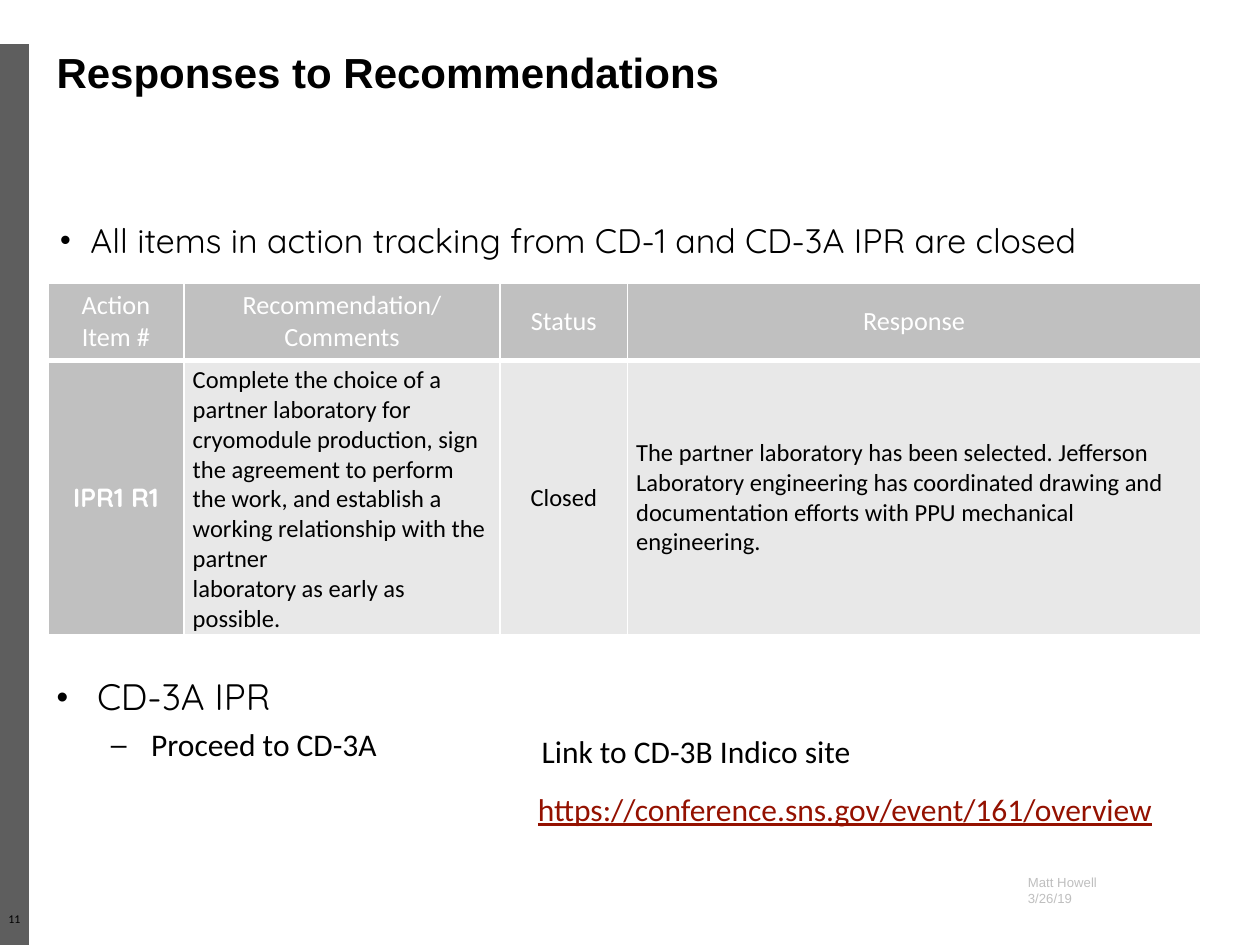
from copy import deepcopy
from dataclasses import dataclass, field

from lxml.etree import SubElement
from pptx import Presentation
from pptx.dml.color import RGBColor
from pptx.enum.shapes import MSO_SHAPE as Shape
from pptx.enum.text import MSO_ANCHOR as Anchor, PP_ALIGN as Align
from pptx.oxml import parse_xml
from pptx.oxml.ns import nsdecls, qn
from pptx.util import Inches, Pt

BLACK = RGBColor(0x00, 0x00, 0x00)
WHITE = RGBColor(0xFF, 0xFF, 0xFF)
SLATE = RGBColor(0x5E, 0x5E, 0x5E)
SILVER = RGBColor(0xBF, 0xBF, 0xBF)
HEAD = RGBColor(0xC0, 0xC0, 0xC0)
PALE = RGBColor(0xE8, 0xE8, 0xE8)
RED = RGBColor(0x94, 0x11, 0x00)

PAD = (0.1, 0.05)
SLIM = (0.07, 0.04)


@dataclass
class Para:
    text: str
    size: float
    face: str = "Calibri"
    color: RGBColor = BLACK
    font: dict = field(default_factory=dict)
    form: dict = field(default_factory=dict)
    mark: str = ""
    indent: tuple = (0, 0)


@dataclass
class Box:
    place: tuple
    paras: list
    pad: tuple = PAD
    anchor: Anchor = Anchor.TOP


def set_all(target, values: dict) -> None:
    for name, value in values.items():
        setattr(target, name, value)


def add_mark(para, item: Para) -> None:
    props = para._p.get_or_add_pPr()
    left, hang = item.indent
    props.set("marL", str(Inches(left)))
    props.set("indent", str(Inches(hang)))
    tint = SubElement(props, qn("a:buClr"))
    SubElement(tint, qn("a:srgbClr"), val=str(BLACK))
    SubElement(props, qn("a:buSzPct"), val="90000")
    SubElement(props, qn("a:buFont"), typeface="Arial")
    SubElement(props, qn("a:buChar"), char=item.mark)


def write(frame, paras: list) -> None:
    for i, item in enumerate(paras):
        para = frame.add_paragraph() if i else frame.paragraphs[0]
        para.text = item.text
        if item.mark:
            add_mark(para, item)
        set_all(para, item.form)
        look = {"size": Pt(item.size), "name": item.face, **item.font}
        for run in para.runs:
            set_all(run.font, look)
            run.font.color.rgb = item.color
        # Line breaks take the size of the text around them
        for gap in para._p.findall(qn("a:br")):
            gap.insert(0, deepcopy(para.runs[0]._r.rPr))


def add_box(slide, box: Box) -> None:
    frame = slide.shapes.add_textbox(*map(Inches, box.place)).text_frame
    side, edge = map(Inches, box.pad)
    set_all(frame, {
        "word_wrap": True, "vertical_anchor": box.anchor,
        "margin_left": side, "margin_right": side,
        "margin_top": edge, "margin_bottom": edge})
    write(frame, box.paras)


def add_edges(cell, base: float) -> None:
    props = cell._tc.get_or_add_tcPr()
    for i, side in enumerate("LRTB"):
        width = Pt(base if side == "B" else 1)
        props.insert(i, parse_xml(
            f'<a:ln{side} {nsdecls("a")} w="{width}"><a:solidFill>'
            f'<a:srgbClr val="{WHITE}"/></a:solidFill></a:ln{side}>'))


def fill_cell(cell, item: Para, fill: RGBColor, base: float) -> None:
    side, edge = map(Inches, SLIM)
    set_all(cell, {
        "vertical_anchor": Anchor.MIDDLE,
        "margin_left": side, "margin_right": side,
        "margin_top": edge, "margin_bottom": edge})
    cell.fill.solid()
    cell.fill.fore_color.rgb = fill
    add_edges(cell, base)
    write(cell.text_frame, [item])


MID = {"alignment": Align.CENTER}
TIGHT = {"line_spacing": 0.9}

BOXES = [
    # Page number and footer
    Box((0, 7.25, 0.23, 0.17), [Para("11", 6.8, form=MID | TIGHT)], (0, 0)),
    Box((8.06, 6.89, 1.67, 0.35),
        [Para(t, 7.5, "Arial", SILVER) for t in ("Matt Howell", "3/26/19")]),
    # Title
    Box((0.35, 0.3, 9.38, 0.59),
        [Para("Responses to Recommendations", 24, "Arial",
              font={"bold": True}, form=TIGHT)], anchor=Anchor.MIDDLE),
    # Bullets above and below the table
    Box((0.38, 1.69, 9.37, 0.44),
        [Para("All items in action tracking from CD-1 and CD-3A IPR are closed",
              19.4, "Quicksand", mark="•", indent=(0.24, -0.24))]),
    Box((0.38, 5.35, 9.38, 0.82),
        [Para("CD-3A IPR", 21, "Quicksand", form=TIGHT,
              mark="•", indent=(0.32, -0.32)),
         Para("Proceed to CD-3A", 18,
              form=TIGHT | {"level": 1, "space_before": Pt(6)},
              mark="–", indent=(0.75, -0.32))], SLIM),
    # Meeting site
    Box((4.17, 6.22, 5.58, 0.4),
        [Para("https://conference.sns.gov/event/161/overview", 18,
              color=RED, font={"underline": True})]),
    Box((4.2, 5.76, 5.22, 0.4), [Para("Link to CD-3B Indico site", 18)]),
]

COLS = (1.08, 2.51, 1.01, 4.55)
ROWS = (0.61, 1.65)
TITLES = ("Action Item #", "Recommendation/ Comments", "Status", "Response")
ADVICE = ("Complete the choice of a partner laboratory for cryomodule "
          "production, sign the agreement to perform the work, and establish "
          "a working relationship with the partner\n"
          "laboratory as early as possible.")
REPLY = ("The partner laboratory has been selected. Jefferson Laboratory "
         "engineering has coordinated drawing and documentation efforts with "
         "PPU mechanical engineering.")
ITEMS = (
    Para("IPR1 R1", 15, "Quicksand", WHITE, {"bold": True}, MID),
    Para(ADVICE, 14),
    Para("Closed", 14, form=MID),
    Para(REPLY, 14),
)


def add_grid(slide) -> None:
    place = map(Inches, (0.38, 2.25, sum(COLS), sum(ROWS)))
    grid = slide.shapes.add_table(len(ROWS), len(COLS), *place).table
    for row, high in zip(grid.rows, ROWS):
        row.height = Inches(high)
    for i, (wide, title, item) in enumerate(zip(COLS, TITLES, ITEMS)):
        grid.columns[i].width = Inches(wide)
        label = Para(title, 15, color=WHITE, font={"bold": False}, form=MID)
        fill_cell(grid.cell(0, i), label, HEAD, 3)
        item.font.setdefault("bold", False)
        fill_cell(grid.cell(1, i), item, PALE if i else HEAD, 1)


def main() -> None:
    deck = Presentation()
    deck.slide_width, deck.slide_height = Inches(10), Inches(7.5)
    slide = deck.slides.add_slide(deck.slide_layouts[6])

    # Side bar
    bar = slide.shapes.add_shape(
        Shape.RECTANGLE, *map(Inches, (0, 0.35, 0.23, 7.15)))
    bar.shadow.inherit = False
    bar.fill.solid()
    bar.fill.fore_color.rgb = SLATE
    bar.line.fill.background()

    for box in BOXES:
        add_box(slide, box)
    add_grid(slide)
    deck.save("out.pptx")


if __name__ == "__main__":
    main()
